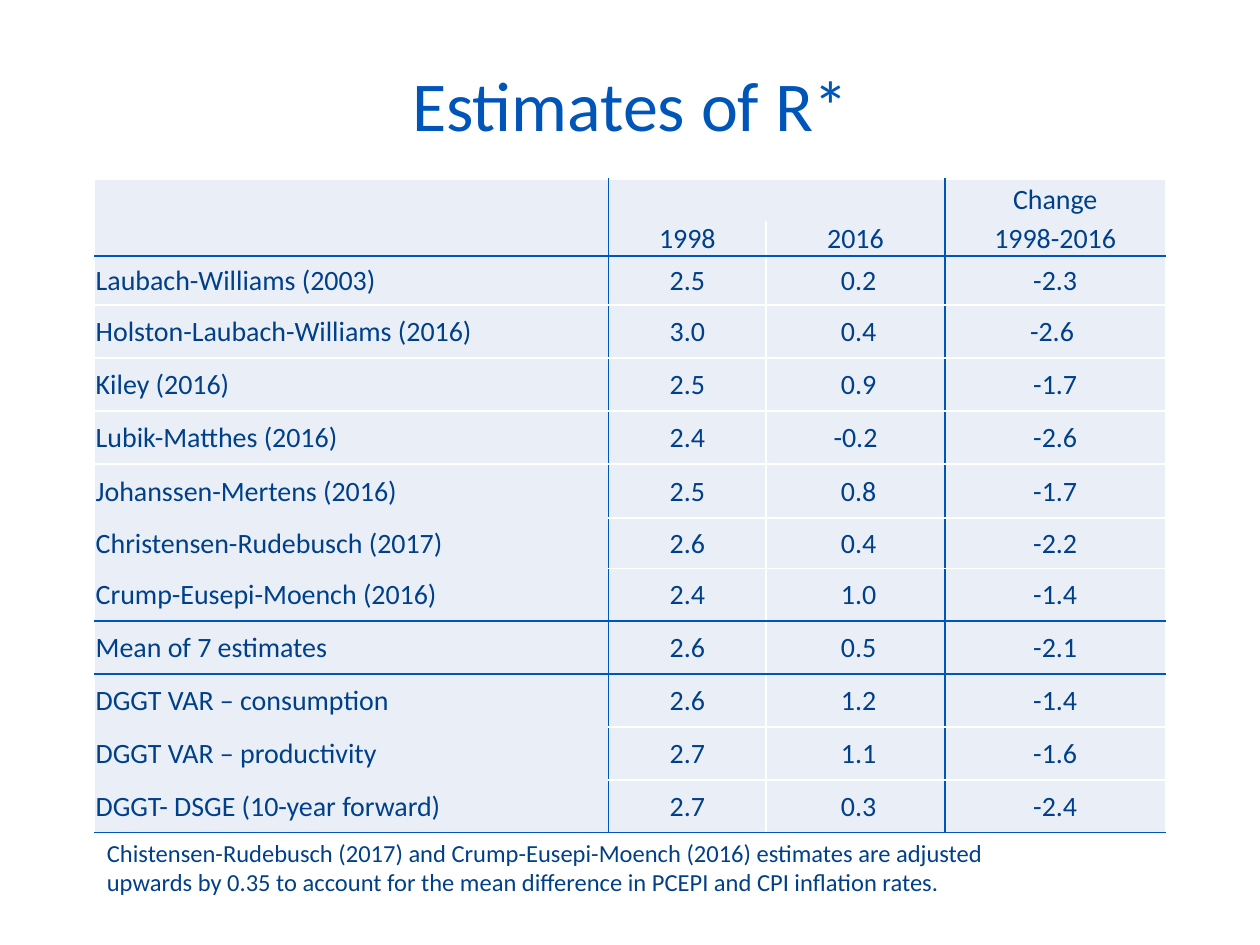
from lxml.etree import SubElement
from pptx import Presentation
from pptx.dml.color import RGBColor
from pptx.enum.text import MSO_ANCHOR as Anchor, MSO_AUTO_SIZE as AutoSize, PP_ALIGN as Align
from pptx.oxml.ns import qn
from pptx.util import Inches, Pt

BLUE = RGBColor(0x00, 0x55, 0xB8)
NAVY = RGBColor(0x00, 0x40, 0x8A)
PALE = RGBColor(0xEA, 0xEF, 0xF7)
WHITE = RGBColor(0xFF, 0xFF, 0xFF)

WIDTH, HEIGHT = Inches(10), Inches(7.5)
COLUMNS = [4.08, 1.25, 1.42, 1.75]
ROWS = [0.33, 0.17, 0.39] + [0.42] * 3 + [0.43, 0.4] + [0.42] * 5

ESTIMATES = [
    ("", "", "", "Change"),
    ("", "1998", "2016", "1998-2016"),
    ("Laubach-Williams (2003)", "2.5", " 0.2", "-2.3"),
    ("Holston-Laubach-Williams (2016)", "3.0", " 0.4", "-2.6 "),
    ("Kiley (2016)", "2.5", " 0.9", "-1.7"),
    ("Lubik-Matthes (2016)", "2.4", "-0.2", "-2.6"),
    ("Johanssen-Mertens (2016) ", "2.5", " 0.8", "-1.7"),
    ("Christensen-Rudebusch (2017)", "2.6", " 0.4", "-2.2"),
    ("Crump-Eusepi-Moench (2016)", "2.4", " 1.0", "-1.4"),
    ("Mean of 7 estimates", "2.6", " 0.5", "-2.1"),
    ("DGGT VAR – consumption", "2.6", " 1.2", "-1.4"),
    ("DGGT VAR – productivity", "2.7", " 1.1", "-1.6"),
    ("DGGT- DSGE (10-year forward)", "2.7", " 0.3", "-2.4"),
]
NOTE = [
    "Chistensen-Rudebusch (2017) and Crump-Eusepi-Moench (2016) estimates are adjusted",
    "upwards by 0.35 to account for the mean difference in PCEPI and CPI inflation rates.",
]

# Rules between cells, numbered by the row above or the column to the left
BLUE_BELOW = {1, 8, 9, 12}
BLUE_RIGHT_OF = {0, 2}
OPEN_BELOW_LABEL = {0, 6, 7, 10, 11}

CELL_FORMAT = dict(margin_left=Inches(0.01), margin_right=Inches(0.01),
                   margin_top=Inches(0.01), margin_bottom=0,
                   vertical_anchor=Anchor.MIDDLE)


def apply(target, values):
    for name, value in values.items():
        setattr(target, name, value)


def write(paragraph, text, size, color, align=Align.LEFT):
    paragraph.alignment = align
    if not text:
        # An empty cell must not stretch its row
        paragraph._p.get_or_add_endParaRPr().set("sz", str(size * 100))
        return
    run = paragraph.add_run()
    run.text = text
    apply(run.font, dict(name="Calibri", size=Pt(size)))
    run.font.color.rgb = color


def horizontal_rule(above, column):
    if above in BLUE_BELOW:
        return BLUE
    if above == 0 or (column == 0 and above in OPEN_BELOW_LABEL):
        return None
    return WHITE


def vertical_rule(left_column):
    return BLUE if left_column in BLUE_RIGHT_OF else WHITE


def set_borders(cell, row, column):
    sides = {"L": vertical_rule(column - 1), "R": vertical_rule(column),
             "T": horizontal_rule(row - 1, column), "B": horizontal_rule(row, column)}
    properties = cell._tc.get_or_add_tcPr()
    for side, color in sides.items():
        line = SubElement(properties, qn(f"a:ln{side}"), w=str(Pt(1)))
        if color is None:
            SubElement(line, qn("a:noFill"))
        else:
            fill = SubElement(line, qn("a:solidFill"))
            SubElement(fill, qn("a:srgbClr"), val=str(color))


def add_text(slide, lines, box, size, color, align=Align.LEFT, **frame_format):
    left, top, width, height = box
    frame = slide.shapes.add_textbox(int(WIDTH * left), int(HEIGHT * top),
                                     int(WIDTH * width), int(HEIGHT * height)).text_frame
    apply(frame, dict(word_wrap=True, **frame_format))
    for index, line in enumerate(lines):
        paragraph = frame.add_paragraph() if index else frame.paragraphs[0]
        write(paragraph, line, size, color, align)


def add_estimates(slide):
    table = slide.shapes.add_table(len(ROWS), len(COLUMNS), Inches(0.75), Inches(1.42),
                                   Inches(sum(COLUMNS)), Inches(sum(ROWS))).table
    apply(table, dict(first_row=False, horz_banding=False))
    for column, width in zip(table.columns, COLUMNS):
        column.width = Inches(width)
    for row, height in zip(table.rows, ROWS):
        row.height = Inches(height)
    for r, entries in enumerate(ESTIMATES):
        for c, entry in enumerate(entries):
            cell = table.cell(r, c)
            apply(cell, CELL_FORMAT)
            write(cell.text_frame.paragraphs[0], entry, 16, NAVY,
                  Align.CENTER if c else Align.LEFT)
            set_borders(cell, r, c)
            cell.fill.solid()
            cell.fill.fore_color.rgb = PALE
    # Blank header above the two years
    table.cell(0, 1).merge(table.cell(0, 2))


def main():
    prs = Presentation()
    apply(prs, dict(slide_width=WIDTH, slide_height=HEIGHT))
    slide = prs.slides.add_slide(prs.slide_layouts[6])

    # Table, title and note
    add_estimates(slide)
    add_text(slide, ["Estimates of R*"], (0.05, 0.04, 0.9, 0.14), 40, BLUE,
             Align.CENTER, vertical_anchor=Anchor.MIDDLE)
    add_text(slide, NOTE, (0.075, 0.88, 0.86, 0.08), 14, NAVY,
             auto_size=AutoSize.SHAPE_TO_FIT_TEXT)
    prs.save("out.pptx")


if __name__ == "__main__":
    main()
